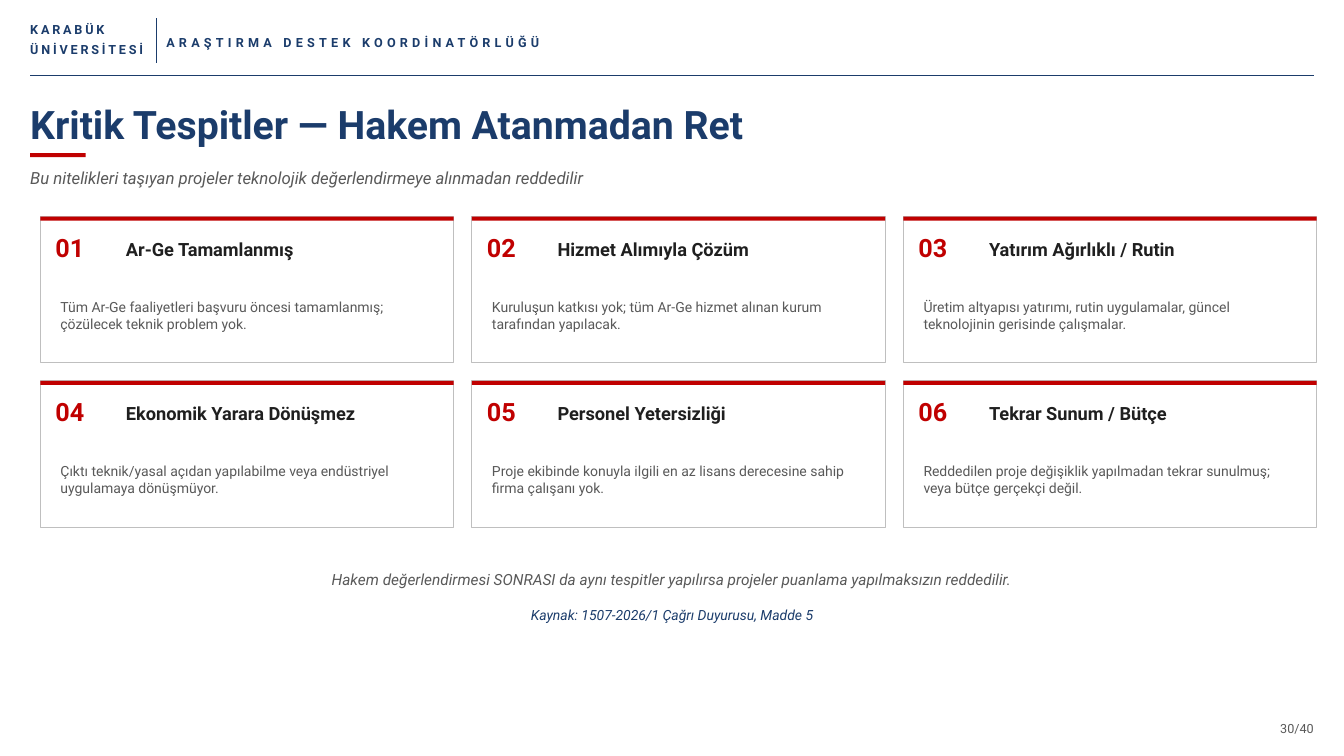
from pptx import Presentation
from pptx.dml.color import RGBColor
from pptx.enum.shapes import MSO_CONNECTOR, MSO_SHAPE
from pptx.enum.text import MSO_ANCHOR, MSO_AUTO_SIZE, PP_ALIGN
from pptx.oxml.ns import qn
from pptx.util import Inches, Pt
from lxml.etree import SubElement

NAVY, RED, GRAY, DARK = "1B3C6B", "C00000", "595959", "1F1F1F"
WHITE, BORDER = "FFFFFF", "BFBFBF"

CARDS = [
    ("Ar-Ge Tamamlanmış",
     "Tüm Ar-Ge faaliyetleri başvuru öncesi tamamlanmış; çözülecek teknik problem yok."),
    ("Hizmet Alımıyla Çözüm",
     "Kuruluşun katkısı yok; tüm Ar-Ge hizmet alınan kurum tarafından yapılacak."),
    ("Yatırım Ağırlıklı / Rutin",
     "Üretim altyapısı yatırımı, rutin uygulamalar, güncel teknolojinin gerisinde çalışmalar."),
    ("Ekonomik Yarara Dönüşmez",
     "Çıktı teknik/yasal açıdan yapılabilme veya endüstriyel uygulamaya dönüşmüyor."),
    ("Personel Yetersizliği",
     "Proje ekibinde konuyla ilgili en az lisans derecesine sahip firma çalışanı yok."),
    ("Tekrar Sunum / Bütçe",
     "Reddedilen proje değişiklik yapılmadan tekrar sunulmuş; veya bütçe gerçekçi değil."),
]


def color(hex_string):
    return RGBColor.from_string(hex_string)


class SlideBuilder:
    """Places elements on a fine grid with ten columns and ten rows to the inch."""

    font_name = "Roboto"
    cells_per_inch = 10

    def __init__(self, slide):
        self.slide = slide

    def cells(self, *counts):
        return [Inches(count / self.cells_per_inch) for count in counts]

    def set_text(self, shape, text, size, hex_string, bold=False, italic=False,
                 align=PP_ALIGN.LEFT, spacing=0):
        frame = shape.text_frame
        frame.word_wrap = True
        frame.auto_size = MSO_AUTO_SIZE.NONE
        frame.vertical_anchor = MSO_ANCHOR.MIDDLE
        frame.margin_left = frame.margin_right = 0
        frame.margin_top = frame.margin_bottom = 0
        paragraph = frame.paragraphs[0]
        paragraph.alignment = align
        run = paragraph.add_run()
        run.text = text
        font = paragraph.font
        font.name, font.size = self.font_name, Pt(size)
        font.bold, font.italic = bold, italic
        font.color.rgb = color(hex_string)
        if spacing:
            run._r.get_or_add_rPr().set("spc", str(spacing * 100))

    def title(self, area, text, size, hex_string):
        shape = self.slide.shapes.title
        shape.left, shape.top, shape.width, shape.height = self.cells(*area)
        self.set_text(shape, text, size, hex_string, bold=True)

    def text(self, area, text, size, hex_string, **style):
        shape = self.slide.shapes.add_textbox(*self.cells(*area))
        self.set_text(shape, text, size, hex_string, **style)

    def rectangle(self, area, fill, border=None):
        shape = self.slide.shapes.add_shape(MSO_SHAPE.RECTANGLE, *self.cells(*area))
        shape.shadow.inherit = False
        shape.fill.solid()
        shape.fill.fore_color.rgb = color(fill)
        if border:
            shape.line.color.rgb = color(border)
            shape.line.width = Pt(0.75)
        else:
            shape.line.fill.background()

    def line(self, ends, hex_string, width):
        connector = self.slide.shapes.add_connector(
            MSO_CONNECTOR.STRAIGHT, *self.cells(*ends))
        connector.line.color.rgb = color(hex_string)
        connector.line.width = Pt(width)
        SubElement(connector._element.spPr, qn("a:effectLst"))

    def card(self, left, top, number, heading, description):
        self.rectangle((left, top, 41, 14.5), WHITE, BORDER)
        self.rectangle((left, top, 41, 0.4), RED)
        self.text((left + 1.5, top + 1, 7, 4), f"{number:02d}", 18, RED, bold=True)
        self.text((left + 8.5, top + 1.2, 31, 4), heading, 13, DARK, bold=True)
        self.text((left + 2, top + 5.5, 37, 8.5), description, 10, GRAY)


def main():
    presentation = Presentation()
    presentation.slide_width = Inches(13.33)
    presentation.slide_height = Inches(7.5)
    title_only = presentation.slide_layouts[5]
    builder = SlideBuilder(presentation.slides.add_slide(title_only))

    # Header
    for row, name in enumerate(["KARABÜK", "ÜNİVERSİTESİ"]):
        builder.text((3, 1.8 + 2 * row, 12, 2.2), name, 9, NAVY, bold=True, spacing=2)
    builder.line((15.5, 1.8, 15.5, 6.3), NAVY, 1)
    builder.text((16.5, 3, 60, 2.5), "ARAŞTIRMA DESTEK KOORDİNATÖRLÜĞÜ", 9, NAVY,
                 bold=True, spacing=3)
    builder.line((3, 7.5, 130.3, 7.5), NAVY, 0.75)

    # Title and subtitle
    builder.title((3, 9.5, 127.3, 5.5), "Kritik Tespitler — Hakem Atanmadan Ret", 28, NAVY)
    builder.rectangle((3, 15.2, 5.5, 0.4), RED)
    builder.text((3, 16, 127.3, 3.2),
                 "Bu nitelikleri taşıyan projeler teknolojik değerlendirmeye alınmadan reddedilir",
                 12, GRAY, italic=True)

    # Cards, three to a row
    for index, (heading, description) in enumerate(CARDS):
        row, column = divmod(index, 3)
        builder.card(4 + 42.8 * column, 21.5 + 16.3 * row, index + 1, heading, description)

    # Closing note, source and page number
    builder.text((4, 55.5, 125.3, 4),
                 "Hakem değerlendirmesi SONRASI da aynı tespitler yapılırsa projeler "
                 "puanlama yapılmaksızın reddedilir.",
                 11, GRAY, italic=True, align=PP_ALIGN.CENTER)
    builder.text((4, 59.5, 125.3, 3), "Kaynak: 1507-2026/1 Çağrı Duyurusu, Madde 5",
                 10, NAVY, italic=True, align=PP_ALIGN.CENTER)
    builder.text((121.3, 71, 9, 2.5), "30/40", 9, GRAY, align=PP_ALIGN.RIGHT)

    presentation.save("out.pptx")


if __name__ == "__main__":
    main()
